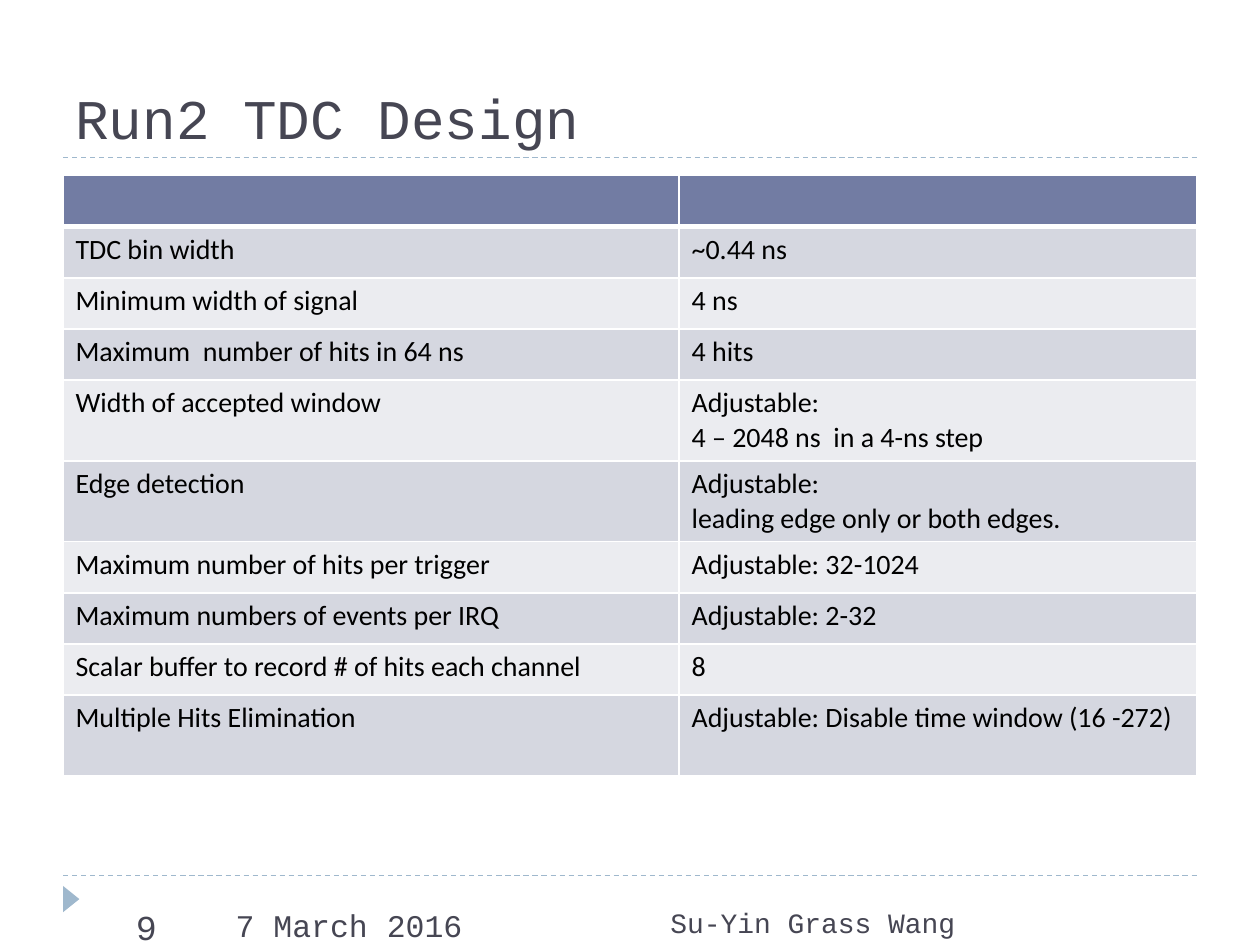
from dataclasses import dataclass

from lxml.etree import SubElement
from pptx import Presentation
from pptx.dml.color import RGBColor as RGB
from pptx.enum.dml import MSO_LINE
from pptx.enum.shapes import MSO_CONNECTOR as CONN, MSO_SHAPE as SHAPE
from pptx.enum.text import MSO_ANCHOR as ANCHOR, PP_ALIGN as ALIGN
from pptx.oxml.ns import qn
from pptx.util import Cm, Pt

TITLE = "Run2 TDC Design"
ROWS = [
    ("", ""),
    ("TDC bin width", "~0.44 ns"),
    ("Minimum width of signal", "4 ns"),
    ("Maximum  number of hits in 64 ns", "4 hits"),
    ("Width of accepted window", "Adjustable:\n4 – 2048 ns  in a 4-ns step"),
    ("Edge detection", "Adjustable:\nleading edge only or both edges."),
    ("Maximum number of hits per trigger", "Adjustable: 32-1024"),
    ("Maximum numbers of events per IRQ", "Adjustable: 2-32"),
    ("Scalar buffer to record # of hits each channel", "8"),
    ("Multiple Hits Elimination", "Adjustable: Disable time window (16 -272)"),
]
TALL_ROWS = {4, 5, 9}
FOOTERS = [
    ("7 March 2016", 4.5, 6.6, 18, ALIGN.LEFT),
    ("9", 2.49, 2.01, 20, ALIGN.LEFT),
    ("Su-Yin Grass Wang", 13.11, 6.4, 16, ALIGN.RIGHT),
]
LEFT, WIDTH = 1.27, 22.86
COLUMNS = (12.42, 10.44)
ROW_H, TALL_H = 1.03, 1.63


@dataclass(frozen=True)
class Theme:
    ink: str = "464653"
    body: str = "000000"
    accent: str = "9FB8CD"
    header: str = "727CA3"
    bands: tuple = ("EBECF0", "D5D7E0")
    border: str = "FFFFFF"
    mono: str = "Courier New"
    sans: str = "Calibri"
    title_size: int = 32
    table_size: int = 16


T = Theme()


def write(tf, text, font=T.mono, size=16, color=T.ink, align=ALIGN.LEFT):
    for i, line in enumerate(text.split("\n")):
        p = tf.add_paragraph() if i else tf.paragraphs[0]
        p.alignment = align
        r = p.add_run()
        r.text = line
        r.font.name = font
        r.font.size = Pt(size)
        r.font.color.rgb = RGB.from_string(color)


def add_text(s, text, x, y, w, h, anchor=ANCHOR.TOP, **fmt):
    tf = s.shapes.add_textbox(Cm(x), Cm(y), Cm(w), Cm(h)).text_frame
    tf.word_wrap = True
    tf.vertical_anchor = anchor
    write(tf, text, **fmt)


def add_rule(s, y):
    line = s.shapes.add_connector(CONN.STRAIGHT, Cm(LEFT), Cm(y), Cm(LEFT + WIDTH), Cm(y))
    line.line.color.rgb = RGB.from_string(T.accent)
    line.line.width = Pt(0.75)
    line.line.dash_style = MSO_LINE.DASH
    SubElement(line._element.spPr, qn("a:effectLst"))


def add_marker(s):
    sp = s.shapes.add_shape(SHAPE.ISOSCELES_TRIANGLE, Cm(1.17), Cm(17.96), Cm(0.53), Cm(0.33))
    sp.rotation = 90
    sp.shadow.inherit = False
    sp.fill.solid()
    sp.fill.fore_color.rgb = RGB.from_string(T.accent)
    sp.line.fill.background()


def style_cell(cell, fill, bottom):
    tcPr = cell._tc.get_or_add_tcPr()
    for side, width in (("L", 1), ("R", 1), ("T", 1), ("B", bottom)):
        ln = SubElement(tcPr, qn(f"a:ln{side}"), w=str(Pt(width)))
        SubElement(SubElement(ln, qn("a:solidFill")), qn("a:srgbClr"), val=T.border)
    cell.fill.solid()
    cell.fill.fore_color.rgb = RGB.from_string(fill)


def add_parameters(s):
    heights = [TALL_H if i in TALL_ROWS else ROW_H for i in range(len(ROWS))]
    table = s.shapes.add_table(len(ROWS), len(COLUMNS), Cm(LEFT), Cm(3.54),
                               Cm(WIDTH), Cm(sum(heights))).table
    for column, width in zip(table.columns, COLUMNS):
        column.width = Cm(width)
    for i, (texts, height) in enumerate(zip(ROWS, heights)):
        table.rows[i].height = Cm(height)
        for j, text in enumerate(texts):
            cell = table.cell(i, j)
            style_cell(cell, T.bands[i % 2] if i else T.header, 1 if i else 3)
            if text:
                write(cell.text_frame, text, font=T.sans, size=T.table_size, color=T.body)


def main():
    prs = Presentation()
    prs.slide_width, prs.slide_height = Cm(25.4), Cm(19.05)
    s = prs.slides.add_slide(prs.slide_layouts[6])
    for y in (17.65, 3.17):
        add_rule(s, y)
    add_marker(s)
    add_text(s, TITLE, LEFT, 0.43, WIDTH, 2.74, anchor=ANCHOR.BOTTOM, size=T.title_size)
    add_parameters(s)
    for text, x, width, size, align in FOOTERS:
        add_text(s, text, x, 18.13, width, 0.92, size=size, align=align)
    prs.save("out.pptx")


if __name__ == "__main__":
    main()
